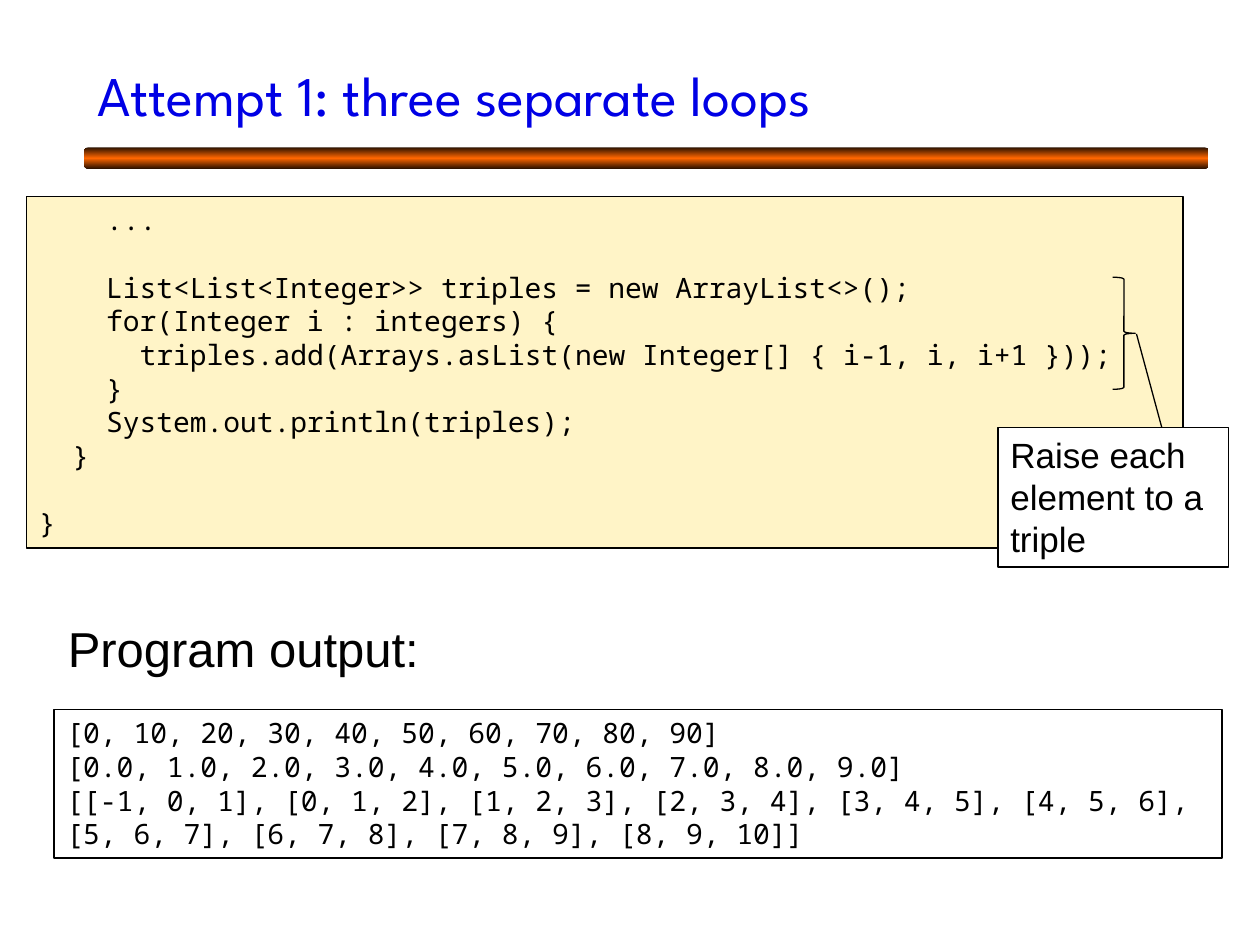
from lxml import etree
from pptx import Presentation
from pptx import util as u
from pptx.dml.color import RGBColor
from pptx.enum import shapes, text
from pptx.oxml import parse_xml
from pptx.oxml.ns import nsdecls, qn

BLACK = RGBColor(0x00, 0x00, 0x00)
WHITE = RGBColor(0xFF, 0xFF, 0xFF)
BLUE = RGBColor(0x00, 0x00, 0xE5)
CREAM = RGBColor(0xFF, 0xF4, 0xC7)
ORANGE = RGBColor(0xFF, 0x66, 0x00)
BROWN = RGBColor(0x2A, 0x11, 0x00)

TITLE = {"name": "League Spartan", "size": u.Pt(32)}
CODE = {"name": "Noto Sans Mono", "size": u.Pt(16)}
LABEL = {"name": "Arial", "size": u.Pt(28)}
NOTE = {"name": "Arial", "size": u.Pt(20)}

CODE_LINE = u.Pt(19.25)  # height of one line of code
CODE_STEP = u.Pt(19.2)   # width of one indent level, two characters

# Each line of code: indent level, empty lines above it, wording
PROGRAM = [
    (2, 0, "..."),
    (2, 1, "List<List<Integer>> triples = new ArrayList<>();"),
    (2, 0, "for(Integer i : integers) {"),
    (3, 0, "triples.add(Arrays.asList(new Integer[] { i-1, i, i+1 }));"),
    (2, 0, "}"),
    (2, 0, "System.out.println(triples);"),
    (1, 0, "}"),
    (0, 1, "}"),
]
OUTPUT = [
    (0, 0, "[0, 10, 20, 30, 40, 50, 60, 70, 80, 90]"),
    (0, 0, "[0.0, 1.0, 2.0, 3.0, 4.0, 5.0, 6.0, 7.0, 8.0, 9.0]"),
    (0, 0, "[[-1, 0, 1], [0, 1, 2], [1, 2, 3], [2, 3, 4], [3, 4, 5], [4, 5, 6],"),
    (0, 0, "[5, 6, 7], [6, 7, 8], [7, 8, 9], [8, 9, 10]]"),
]


def inches(*lengths):
    return [u.Inches(length) for length in lengths]


def set_values(target, values):
    for name, value in values.items():
        setattr(target, name, value)


def write(para, words, font, color=BLACK):
    para.alignment = text.PP_ALIGN.LEFT
    span = para.add_run()
    span.text = words
    set_values(span.font, font)
    span.font.color.rgb = color


def add_shape(page, kind, place, fill=None, outlined=True):
    shape = page.shapes.add_shape(kind, *inches(*place))
    shape.shadow.inherit = False
    if fill is None:
        shape.fill.background()
    else:
        shape.fill.solid()
        shape.fill.fore_color.rgb = fill
    if outlined:
        shape.line.color.rgb = BLACK
        shape.line.width = u.Pt(0.75)
    else:
        shape.line.fill.background()
    return shape


def add_box(page, place, fill=WHITE, outlined=True):
    box = add_shape(page, shapes.MSO_SHAPE.RECTANGLE, place, fill, outlined)
    set_values(box.text_frame, {"word_wrap": True,
                                "vertical_anchor": text.MSO_ANCHOR.TOP})
    return box.text_frame


def add_text(page, place, words, font, outlined=True):
    frame = add_box(page, place, outlined=outlined)
    write(frame.paragraphs[0], words, font)


def add_code(page, place, lines, fill=WHITE):
    frame = add_box(page, place, fill)
    for number, (level, gap, words) in enumerate(lines):
        para = frame.add_paragraph() if number else frame.paragraphs[0]
        set_values(para, {"line_spacing": CODE_LINE,
                          "space_before": u.Pt(gap * CODE_LINE.pt)})
        write(para, words, CODE)
        properties = para._p.get_or_add_pPr()
        properties.set("marL", str(level * CODE_STEP))
        properties.set("indent", "0")


def add_bar(page, place):
    bar = add_shape(page, shapes.MSO_SHAPE.ROUNDED_RECTANGLE, place, ORANGE, False)
    bar.adjustments[0] = 0.167
    stops = "".join(
        f'<a:gs pos="{percent * 1000}"><a:srgbClr val="{color}"/></a:gs>'
        for percent, color in ((0, BROWN), (50, ORANGE), (100, BROWN)))
    gradient = parse_xml(
        f'<a:gradFill {nsdecls("a")} rotWithShape="1"><a:gsLst>{stops}</a:gsLst>'
        '<a:lin ang="5400000" scaled="0"/></a:gradFill>')
    properties = bar._element.spPr
    properties.replace(properties.find(qn("a:solidFill")), gradient)


def add_line(page, start, end):
    line = page.shapes.add_connector(
        shapes.MSO_CONNECTOR.STRAIGHT, *inches(*start, *end))
    line.line.color.rgb = BLACK
    line.line.width = u.Pt(0.75)
    etree.SubElement(line._element.spPr, qn("a:effectLst"))


def set_title(page, place, words):
    title = page.shapes.title
    set_values(title, dict(zip(("left", "top", "width", "height"), inches(*place))))
    title.text_frame.vertical_anchor = text.MSO_ANCHOR.MIDDLE
    write(title.text_frame.paragraphs[0], words, TITLE, BLUE)


def main():
    deck = Presentation()
    set_values(deck, {"slide_width": u.Inches(10), "slide_height": u.Inches(7.5)})
    page = deck.slides.add_slide(deck.slide_layouts.get_by_name("Title Only"))

    # Heading
    add_bar(page, (0.67, 1.17, 8.92, 0.17))
    set_title(page, (0.67, 0.25, 8.92, 1), "Attempt 1: three separate loops")

    # Program with its callout
    add_code(page, (0.21, 1.56, 9.18, 2.79), PROGRAM, CREAM)
    add_shape(page, shapes.MSO_SHAPE.RIGHT_BRACE, (8.83, 2.2, 0.18, 0.89))
    add_line(page, (9.02, 2.65), (9.22, 3.39))
    add_text(page, (7.92, 3.39, 1.83, 1.11), "Raise each element to a triple", NOTE)

    # Program output
    add_code(page, (0.43, 5.63, 9.27, 1.18), OUTPUT)
    add_text(page, (0.44, 4.86, 3.27, 0.57), "Program output:", LABEL, outlined=False)

    deck.save("out.pptx")


if __name__ == "__main__":
    main()
